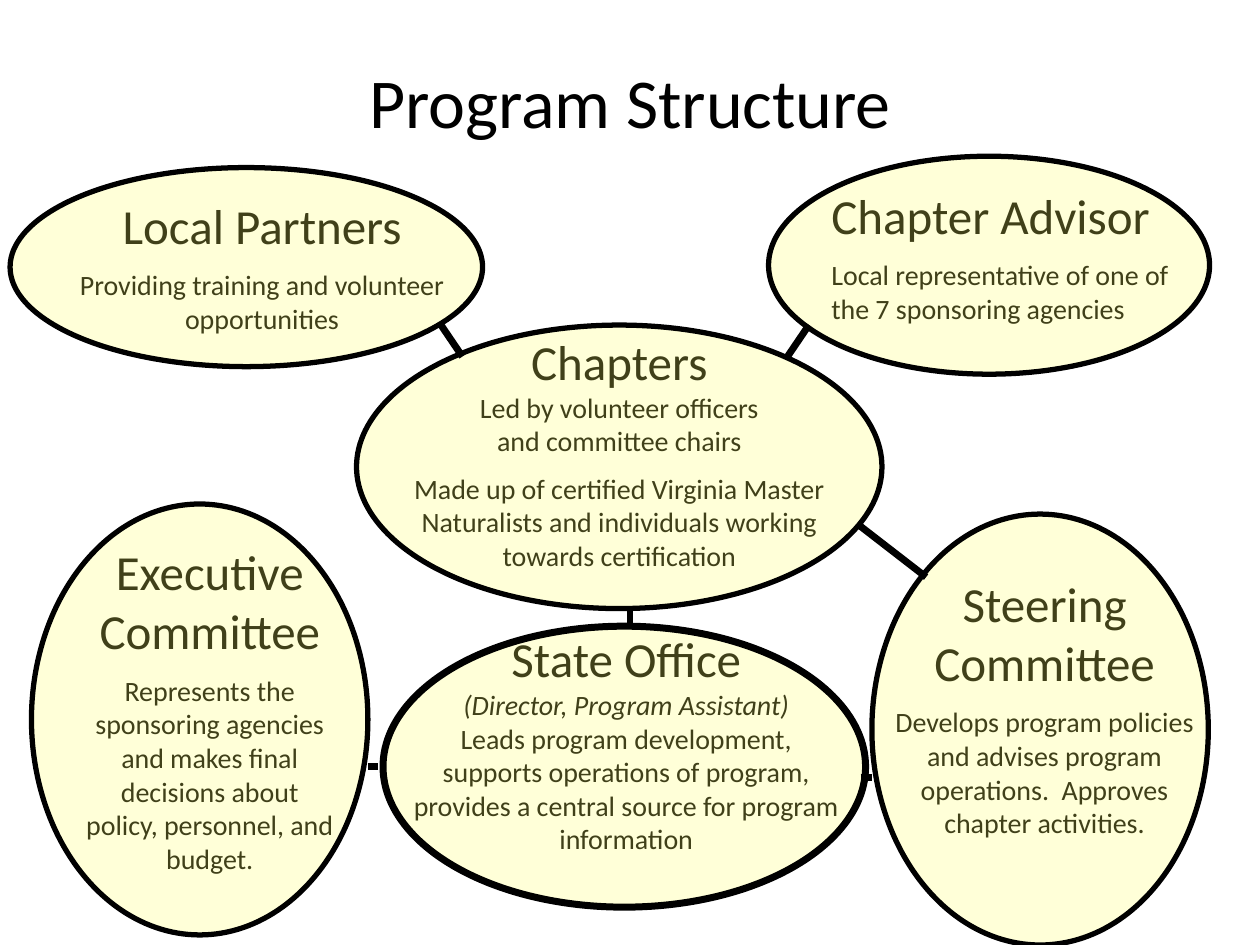
from dataclasses import dataclass

from lxml import etree
from pptx import Presentation
from pptx.dml.color import RGBColor
from pptx.enum import shapes, text
from pptx.oxml import ns
from pptx.util import Inches, Pt

BLACK, YELLOW = "000000", "FFFF66"
HEADING, BODY = 28, 16
CENTER, LEFT = text.PP_ALIGN.CENTER, text.PP_ALIGN.LEFT
Box = tuple[float, float, float, float]


@dataclass
class Run:
    text: str
    size: int = BODY
    italic: bool = False


@dataclass
class Para:
    runs: list[Run]
    before: float = 8


@dataclass
class Node:
    text_box: Box
    ellipse: Box
    paras: list[Para]
    align: text.PP_ALIGN = CENTER
    line_width: float = 3


@dataclass
class Link:
    start: tuple[float, float]
    end: tuple[float, float]


def rgb(color: str) -> RGBColor:
    return RGBColor.from_string(color)


def heading(words: str) -> Para:
    return Para([Run(words, HEADING)], before=0)


def body(words: str, before: float = 8) -> Para:
    return Para([Run(words)], before)


def add_text(p, words: str, *, size: float, italic: bool = False) -> None:
    """Append words to a paragraph, turning newlines into line breaks."""
    for i, line in enumerate(words.split("\n")):
        if i:
            p.add_line_break()
        if not line:
            continue
        r = p.add_run()
        r.text = line
        r.font.name = "Calibri"
        r.font.size = Pt(size)
        r.font.italic = italic
        r.font.color.rgb = rgb(BLACK)


def add_node(s, node: Node) -> None:
    """Draw the text with its translucent ellipse laid over it."""
    tf = s.shapes.add_textbox(*map(Inches, node.text_box)).text_frame
    tf.word_wrap = True
    for i, para in enumerate(node.paras):
        p = tf.add_paragraph() if i else tf.paragraphs[0]
        p.alignment = node.align
        p.space_before = Pt(para.before)
        for run in para.runs:
            add_text(p, run.text, size=run.size, italic=run.italic)

    sp = s.shapes.add_shape(shapes.MSO_SHAPE.OVAL, *map(Inches, node.ellipse))
    sp.shadow.inherit = False
    sp.fill.solid()
    sp.fill.fore_color.rgb = rgb(YELLOW)
    color = sp.fill._xPr.find(".//" + ns.qn("a:srgbClr"))
    etree.SubElement(color, ns.qn("a:alpha"), val="25000")
    sp.line.color.rgb = rgb(BLACK)
    sp.line.width = Pt(node.line_width)


def add_link(s, link: Link) -> None:
    line = s.shapes.add_connector(
        shapes.MSO_CONNECTOR.STRAIGHT, *map(Inches, link.start + link.end))
    line.line.color.rgb = rgb(BLACK)
    line.line.width = Pt(4)
    etree.SubElement(line._element.spPr, ns.qn("a:effectLst"))


NODES = [
    Node((7, 4.5, 2.58, 2.51), (6.92, 4.08, 2.67, 3.42), [
        heading("Steering Committee"),
        body("Develops program policies and advises program operations.  "
             "Approves chapter activities.")]),
    Node((2.92, 2.58, 3.99, 2.05), (2.83, 2.58, 4.17, 2.25), [
        Para([Run("Chapters\n", HEADING),
              Run("Led by volunteer officers\nand committee chairs")], 0),
        body("Made up of certified Virginia Master Naturalists and "
             "individuals working towards certification")]),
    Node((6.5, 1.42, 3.1, 1.24), (6.1, 1.24, 3.5, 1.73), [
        heading("Chapter Advisor"),
        body("Local representative of one of the 7 sponsoring agencies")],
        align=LEFT),
    Node((3.18, 4.94, 3.58, 1.92), (3.04, 4.97, 3.83, 2.23), [
        Para([Run("State Office\n", HEADING),
              Run("(Director, Program Assistant)", italic=True)], 0),
        body("Leads program development, supports operations of program, "
             "provides a central source for program information", before=0)],
        line_width=4),
    Node((0.42, 1.5, 3.32, 1.24), (0.08, 1.33, 3.75, 1.58), [
        heading("Local Partners"),
        body("Providing training and volunteer opportunities")]),
    Node((0.58, 4.25, 2.17, 3.04), (0.25, 4, 2.67, 3.42), [
        heading("Executive Committee"),
        body("Represents the sponsoring agencies and makes final decisions "
             "about policy, personnel, and budget.")]),
]

LINKS = [
    Link((6.83, 6.17), (6.92, 6.17)),
    Link((6.25, 2.83), (6.42, 2.58)),
    Link((3.5, 2.58), (3.67, 2.83)),
    Link((5, 4.97), (5, 4.81)),
    Link((6.82, 4.17), (7.35, 4.58)),
    Link((2.92, 6.08), (3, 6.08)),
]


def main() -> None:
    prs = Presentation()
    prs.slide_width, prs.slide_height = Inches(10), Inches(7.5)
    s = prs.slides.add_slide(prs.slide_layouts[5])

    title = s.shapes.title
    title.left, title.top, title.width, title.height = map(
        Inches, (0.5, 0.17, 9, 1.25))
    title.text_frame.vertical_anchor = text.MSO_ANCHOR.MIDDLE
    p = title.text_frame.paragraphs[0]
    p.alignment = CENTER
    add_text(p, "Program Structure", size=40)

    for node in NODES:
        add_node(s, node)
    for link in LINKS:
        add_link(s, link)
    prs.save("out.pptx")


if __name__ == "__main__":
    main()
